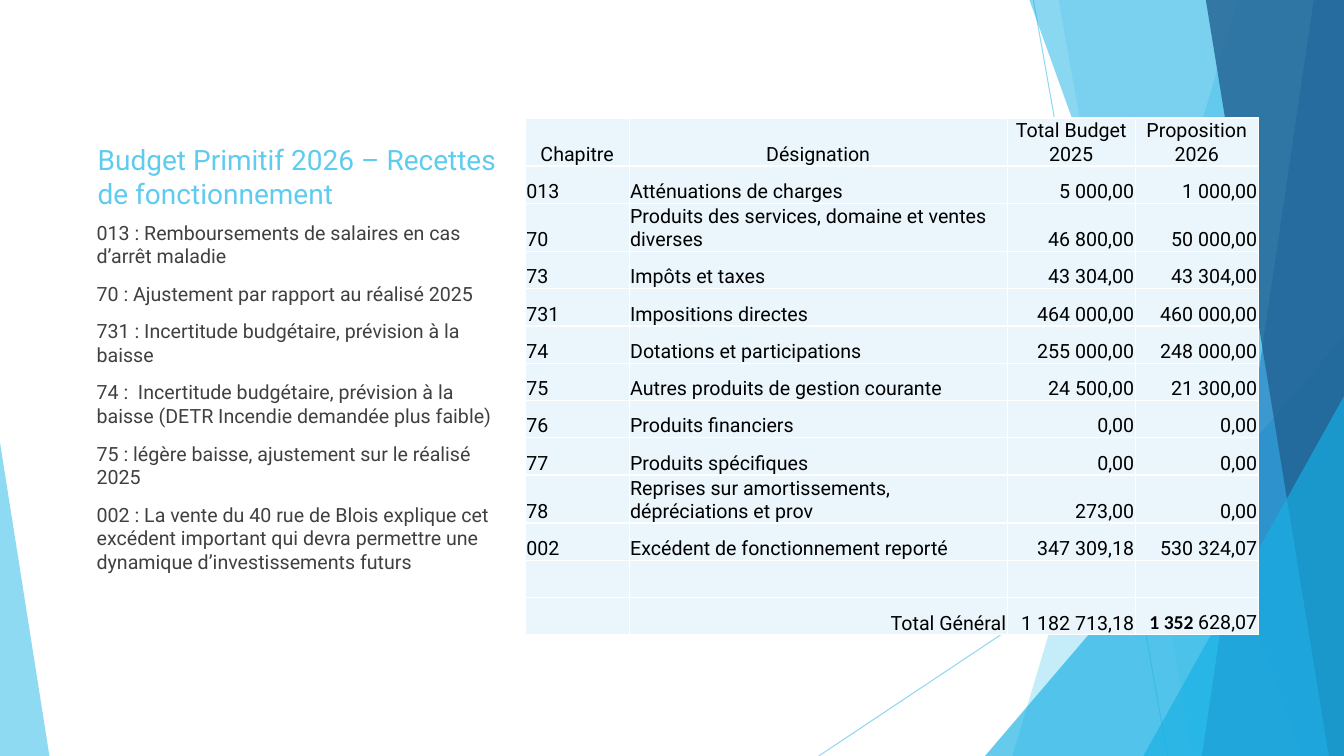
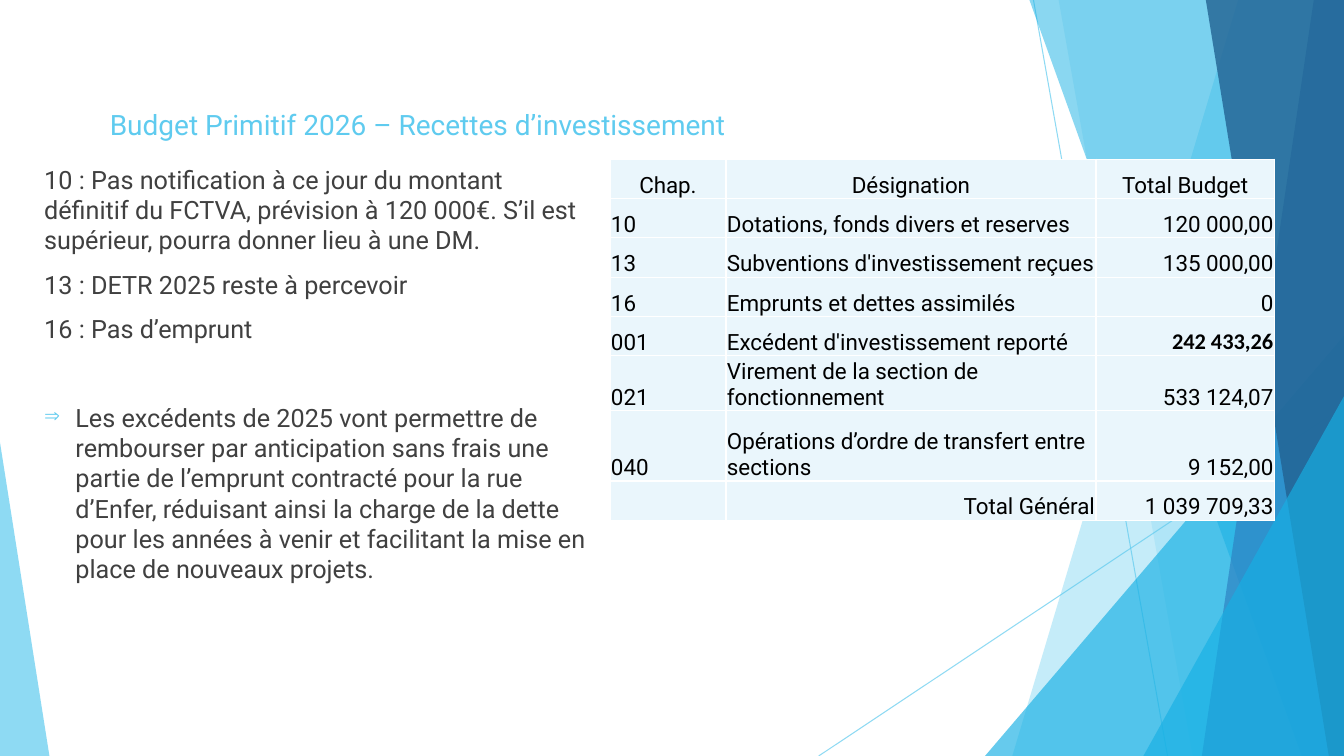
from pptx import Presentation
from pptx.dml.color import RGBColor
from pptx.enum import shapes, text
from pptx.oxml import ns, xmlchemy
from pptx.util import Inches, Pt

SLIDE_WIDTH, SLIDE_HEIGHT = 13.33, 7.5
FONT, BOLD_FONT = "Roboto", "Calibri"
SKY, CYAN, BLUE, NAVY = "5FCBEF", "17B0E4", "2E83C3", "226292"
BODY, BLACK, WHITE, CELL = "404040", "000000", "FFFFFF", "EAF6FC"

# Bands touching the right edge: top left x, bottom left x, colour, opacity
BACK_BANDS = [(12.28, 10.04, SKY, 36), (10.5, 11.83, SKY, 20)]
FRONT_BANDS = [(10.21, 12.91, CYAN, 50), (13.03, 11.92, BLUE, 70), (11.96, 13.18, NAVY, 80)]


def color(hex_text):
    return RGBColor.from_string(hex_text)


def sub_element(parent, tag, **attributes):
    element = xmlchemy.OxmlElement(tag)
    for name, value in attributes.items():
        element.set(name, str(value))
    parent.append(element)
    return element


def set_opacity(shape, percent):
    for element in shape._element.spPr.iter(ns.qn("a:srgbClr")):
        sub_element(element, "a:alpha", val=percent * 1000)


def style_run(run, size, hex_text, bold=False):
    run.font.size = Pt(size)
    run.font.name = BOLD_FONT if bold else FONT
    run.font.bold = bold
    run.font.color.rgb = color(hex_text)


# Background decoration
def paint(shape, hex_text, opacity):
    shape.shadow.inherit = False
    shape.fill.solid()
    shape.fill.fore_color.rgb = color(hex_text)
    shape.line.fill.background()
    set_opacity(shape, opacity)


def add_band(slide, top_x, bottom_x, hex_text, opacity):
    corners = [(SLIDE_WIDTH, 0), (SLIDE_WIDTH, SLIDE_HEIGHT), (bottom_x, SLIDE_HEIGHT)]
    builder = slide.shapes.build_freeform(Inches(top_x), 0)
    builder.add_line_segments([(Inches(x), Inches(y)) for x, y in corners])
    paint(builder.convert_to_shape(), hex_text, opacity)


def add_corner(slide, left, width, height, peak, hex_text, opacity):
    """Triangle standing on the bottom edge; peak is 0 (left) or 1 (right)."""
    triangle = slide.shapes.add_shape(
        shapes.MSO_SHAPE.ISOSCELES_TRIANGLE, Inches(left),
        Inches(SLIDE_HEIGHT - height), Inches(width), Inches(height))
    triangle.adjustments[0] = peak
    paint(triangle, hex_text, opacity)


def add_thin_line(slide, start_x, start_y, end_x, end_y):
    line = slide.shapes.add_connector(
        shapes.MSO_CONNECTOR.STRAIGHT, *map(Inches, (start_x, start_y, end_x, end_y)))
    line.line.color.rgb = color(SKY)
    line.line.width = Pt(0.75)
    set_opacity(line, 70)
    sub_element(line._element.spPr, "a:effectLst")


def add_decoration(slide):
    add_thin_line(slide, 10.25, 0, 11.58, SLIDE_HEIGHT)
    add_thin_line(slide, SLIDE_WIDTH, 4.03, 8.12, SLIDE_HEIGHT)
    for band in BACK_BANDS:
        add_band(slide, *band)
    add_corner(slide, 9.77, 3.56, 4.17, 1, CYAN, 66)
    for band in FRONT_BANDS:
        add_band(slide, *band)
    add_corner(slide, 11.34, 1.99, 3.57, 1, CYAN, 66)
    add_corner(slide, 0, 0.49, 3.11, 0, SKY, 70)


# Text regions
def add_text_frame(slide, box):
    frame = slide.shapes.add_textbox(*map(Inches, box)).text_frame
    frame.word_wrap = True
    return frame


def add_title(slide, box, title):
    frame = add_text_frame(slide, box)
    frame.vertical_anchor = text.MSO_ANCHOR.BOTTOM
    frame.text = title
    style_run(frame.paragraphs[0].runs[0], 20, SKY)


def add_comments(slide, box, comments, size):
    frame = add_text_frame(slide, box)
    frame.text = "\n".join(comments)
    for index, paragraph in enumerate(frame.paragraphs):
        if index:
            paragraph.space_before = Pt(10)
        style_run(paragraph.runs[0], size, BODY)
    return frame


def make_conclusion(paragraph):
    """Set the paragraph apart, with a hanging arrow bullet."""
    paragraph.space_before = Pt(42)
    properties = paragraph._p.get_or_add_pPr()
    properties.set("marL", str(Inches(0.31)))
    properties.set("indent", str(-Inches(0.31)))
    sub_element(sub_element(properties, "a:buClr"), "a:srgbClr", val=SKY)
    sub_element(properties, "a:buSzPct", val=80000)
    sub_element(properties, "a:buChar", char="⇒")


# Budget table
def style_cell(cell):
    cell.margin_left = cell.margin_right = cell.margin_top = Inches(0.01)
    cell.margin_bottom = 0
    cell.vertical_anchor = text.MSO_ANCHOR.BOTTOM
    properties = cell._tc.get_or_add_tcPr()
    for side in ("a:lnL", "a:lnR", "a:lnT", "a:lnB"):
        border = sub_element(properties, side, w=Pt(1))
        sub_element(sub_element(border, "a:solidFill"), "a:srgbClr", val=WHITE)
    cell.fill.solid()
    cell.fill.fore_color.rgb = color(CELL)


def fill_cell(cell, value, size, alignment):
    """A value is plain text, or a pair of bold text and plain text."""
    bold_part, plain_part = value if isinstance(value, tuple) else ("", value)
    paragraph = cell.text_frame.paragraphs[0]
    paragraph.alignment = alignment
    for part, bold in ((bold_part, True), (plain_part, False)):
        if part:
            run = paragraph.add_run()
            run.text = part
            style_run(run, size, BLACK, bold)


def add_budget_table(slide, left, top, widths, row_height, tall_rows, rows, size):
    heights = [tall_rows.get(index, row_height) for index in range(len(rows))]
    table = slide.shapes.add_table(
        len(rows), len(widths), Inches(left), Inches(top),
        Inches(sum(widths)), Inches(sum(heights))).table
    table.first_row = table.horz_banding = False
    for column, width in zip(table.columns, widths):
        column.width = Inches(width)
    for row_index, (row, height, values) in enumerate(zip(table.rows, heights, rows)):
        row.height = Inches(height)
        for column_index, (cell, value) in enumerate(zip(row.cells, values)):
            if row_index == 0:
                alignment = text.PP_ALIGN.CENTER
            elif column_index >= 2 or row_index == len(rows) - 1:
                alignment = text.PP_ALIGN.RIGHT
            else:
                alignment = text.PP_ALIGN.LEFT
            style_cell(cell)
            fill_cell(cell, value, size, alignment)


# Slides
def add_slide(presentation):
    slide = presentation.slides.add_slide(presentation.slide_layouts[6])
    add_decoration(slide)
    return slide


def add_operating_slide(presentation):
    slide = add_slide(presentation)
    add_title(slide, (0.87, 1.17, 4.22, 0.96),
              "Budget Primitif 2026 – Recettes de fonctionnement")
    add_comments(slide, (0.86, 2.14, 4.22, 4.46), [
        "013 : Remboursements de salaires en cas d’arrêt maladie",
        "70 : Ajustement par rapport au réalisé 2025",
        "731 : Incertitude budgétaire, prévision à la baisse",
        "74 :  Incertitude budgétaire, prévision à la baisse (DETR Incendie demandée plus faible)",
        "75 : légère baisse, ajustement sur le réalisé 2025",
        "002 : La vente du 40 rue de Blois explique cet excédent important qui devra "
        "permettre une dynamique d’investissements futurs",
    ], 14)
    rows = [
        ("Chapitre", "Désignation", "Total Budget 2025", "Proposition 2026"),
        ("013", "Atténuations de charges", "5 000,00", "1 000,00"),
        ("70", "Produits des services, domaine et ventes diverses", "46 800,00", "50 000,00"),
        ("73", "Impôts et taxes", "43 304,00", "43 304,00"),
        ("731", "Impositions directes", "464 000,00", "460 000,00"),
        ("74", "Dotations et participations", "255 000,00", "248 000,00"),
        ("75", "Autres produits de gestion courante", "24 500,00", "21 300,00"),
        ("76", "Produits financiers", "0,00", "0,00"),
        ("77", "Produits spécifiques", "0,00", "0,00"),
        ("78", "Reprises sur amortissements, dépréciations et prov", "273,00", "0,00"),
        ("002", "Excédent de fonctionnement reporté", "347 309,18", "530 324,07"),
        ("", "", "", ""),
        ("", "Total Général", "1 182 713,18", ("1 352 ", "628,07")),
    ]
    add_budget_table(slide, 5.21, 1.17, (1.03, 3.75, 1.27, 1.22), 0.37,
                     {0: 0.47, 2: 0.47, 9: 0.47}, rows, 14)


def add_investment_slide(presentation):
    slide = add_slide(presentation)
    add_title(slide, (0.99, 0.49, 9.32, 0.96),
              "Budget Primitif 2026 – Recettes d’investissement")
    frame = add_comments(slide, (0.34, 1.58, 5.58, 5.72), [
        "10 : Pas notification à ce jour du montant définitif du FCTVA, prévision à "
        "120 000€. S’il est supérieur, pourra donner lieu à une DM.",
        "13 : DETR 2025 reste à percevoir",
        "16 : Pas d’emprunt",
        "Les excédents de 2025 vont permettre de rembourser par anticipation sans frais "
        "une partie de l’emprunt contracté pour la rue d’Enfer, réduisant ainsi la charge "
        "de la dette pour les années à venir et facilitant la mise en place de nouveaux projets.",
    ], 18)
    make_conclusion(frame.paragraphs[-1])
    rows = [
        ("Chap.", "Désignation", "Total Budget"),
        ("10", "Dotations, fonds divers et reserves", "120 000,00"),
        ("13", "Subventions d'investissement reçues", "135 000,00"),
        ("16", "Emprunts et dettes assimilés", "0"),
        ("001", "Excédent d'investissement reporté", ("242 433,26", "")),
        ("021", "Virement de la section de fonctionnement", "533 124,07"),
        ("040", "Opérations d’ordre de transfert entre sections", "9 152,00"),
        ("", "Total Général", "1 039 709,33"),
    ]
    add_budget_table(slide, 6.05, 1.58, (1.15, 3.67, 1.77), 0.39,
                     {5: 0.52, 6: 0.7}, rows, 16)


def main():
    presentation = Presentation()
    presentation.slide_width = Inches(SLIDE_WIDTH)
    presentation.slide_height = Inches(SLIDE_HEIGHT)
    add_operating_slide(presentation)
    add_investment_slide(presentation)
    presentation.save("out.pptx")


if __name__ == "__main__":
    main()
